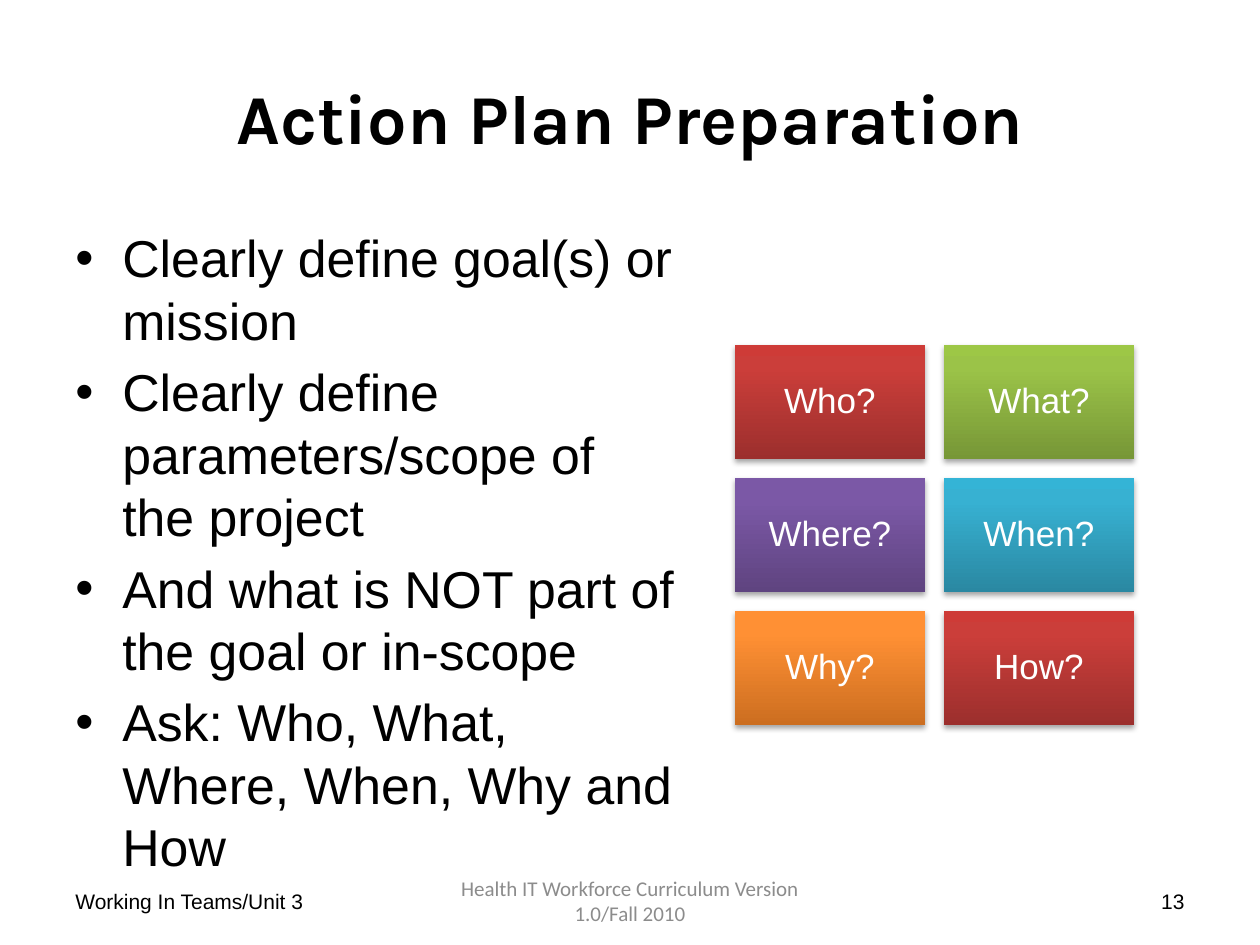
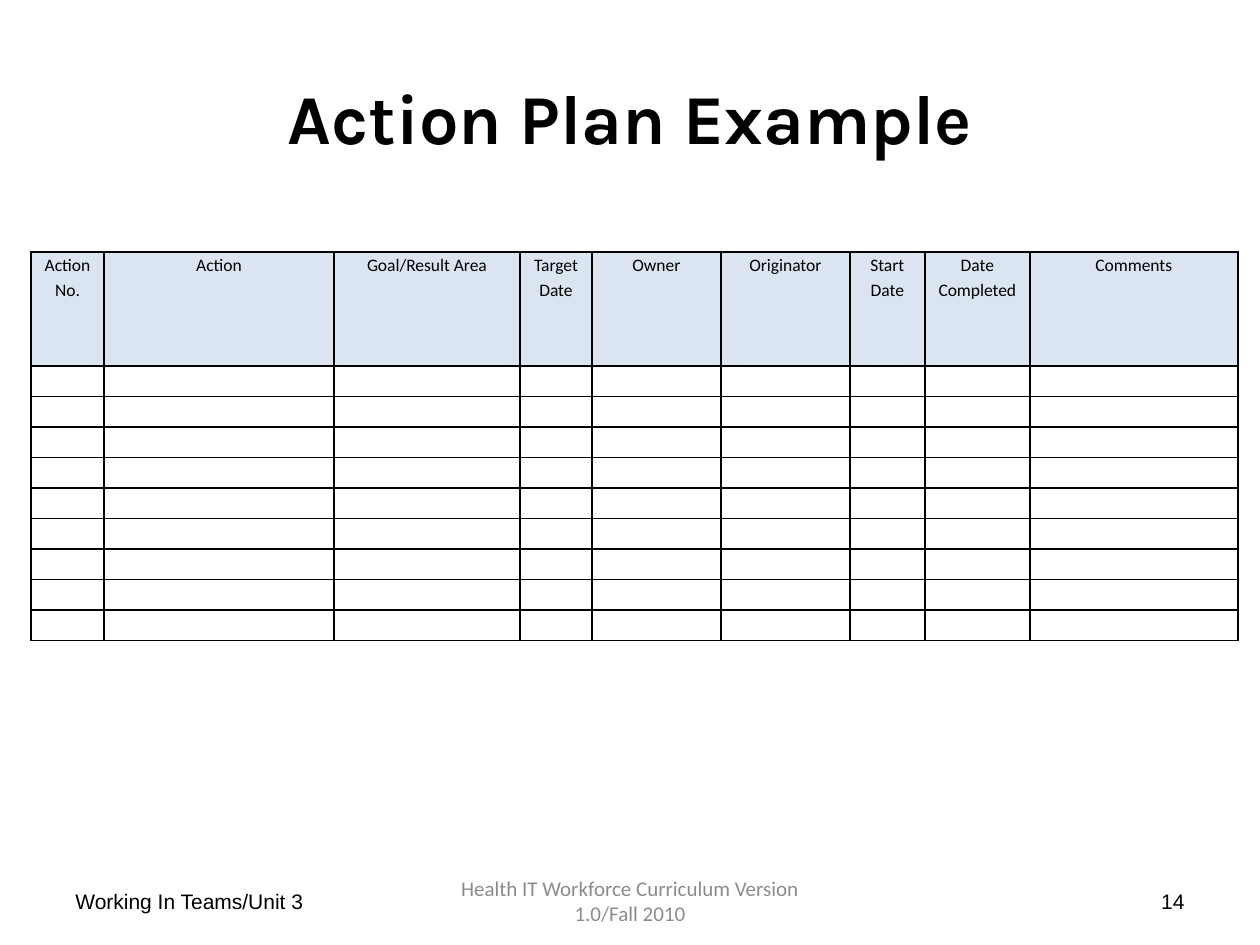
from pptx import Presentation
from pptx.dml.color import RGBColor
from pptx.enum.shapes import MSO_SHAPE
from pptx.enum.text import MSO_ANCHOR, MSO_AUTO_SIZE, PP_ALIGN
from pptx.oxml import parse_xml
from pptx.oxml.ns import nsdecls
from pptx.util import Pt

# Style
BLACK = RGBColor(0x00, 0x00, 0x00)
WHITE = RGBColor(0xFF, 0xFF, 0xFF)
GREY = RGBColor(0x8C, 0x8C, 0x8C)
HEADER_BLUE = RGBColor(0xDB, 0xE5, 0xF1)

# Tile gradients: bottom, near the top, top
RED = [RGBColor.from_string(c) for c in ("9C2F2D", "CB3E3A", "CE3B37")]
GREEN = [RGBColor.from_string(c) for c in ("779737", "9BC348", "9DC746")]
PURPLE = [RGBColor.from_string(c) for c in ("5F4480", "7B58A6", "7C57A8")]
TEAL = [RGBColor.from_string(c) for c in ("2A88A2", "37B1D2", "34B4D6")]
ORANGE = [RGBColor.from_string(c) for c in ("CC6E20", "FF9034", "FF9136")]
STOPS = (0, 80000, 100000)

LEFT, CENTER, RIGHT = PP_ALIGN.LEFT, PP_ALIGN.CENTER, PP_ALIGN.RIGHT
TOP, MIDDLE = MSO_ANCHOR.TOP, MSO_ANCHOR.MIDDLE
NO_FIT = MSO_AUTO_SIZE.NONE
RECT = MSO_SHAPE.RECTANGLE

PX_PER_INCH = 126
TITLE_ONLY = 5


def px(n):
    return round(n * 914400 / PX_PER_INCH)


def write(p, text, font="Arial", size=12, color=BLACK, bold=False,
          align=LEFT, spacing=None, before=None):
    """Put one formatted run in a paragraph."""
    p.alignment = align
    if spacing:
        p.line_spacing = spacing
    if before is not None:
        p.space_before = Pt(before)
    r = p.add_run()
    r.text = text
    r.font.name = font
    r.font.size = Pt(size)
    r.font.bold = bold
    r.font.color.rgb = color


class Deck:
    def __init__(self):
        self.prs = Presentation()
        self.prs.slide_width, self.prs.slide_height = px(1260), px(945)
        self.s = None

    def slide(self, title, number):
        self.s = self.prs.slides.add_slide(self.prs.slide_layouts[TITLE_ONLY])
        sp = self.s.shapes.title
        sp.left, sp.top, sp.width, sp.height = px(63), px(38), px(1134), px(157)
        tf = sp.text_frame
        tf.auto_size = NO_FIT
        tf.vertical_anchor = MIDDLE
        write(tf.paragraphs[0], title, font="Karla", size=40, bold=True,
              align=CENTER)
        self.footer(number)

    def text_frame(self, x, y, w, h, anchor=TOP):
        tf = self.s.shapes.add_textbox(px(x), px(y), px(w), px(h)).text_frame
        tf.word_wrap = True
        tf.auto_size = NO_FIT
        tf.vertical_anchor = anchor
        return tf

    def footer(self, number):
        parts = [
            (63, 294, "Working In Teams/Unit 3", dict(align=LEFT)),
            (430, 400, "Health IT Workforce Curriculum Version 1.0/Fall 2010",
             dict(font="Calibri", color=GREY, align=CENTER)),
            (903, 294, str(number), dict(align=RIGHT)),
        ]
        for x, w, text, style in parts:
            tf = self.text_frame(x, 876, w, 50, MIDDLE)
            write(tf.paragraphs[0], text, **style)

    def bullets(self, x, y, w, h, items):
        tf = self.text_frame(x, y, w, h)
        for i, item in enumerate(items):
            p = tf.add_paragraph() if i else tf.paragraphs[0]
            write(p, item, size=29.6, spacing=1.0, before=5.5)
            pPr = p._p.get_or_add_pPr()
            pPr.set("marL", str(px(47)))
            pPr.set("indent", str(-px(47)))
            pPr.append(parse_xml(
                f'<a:buFont {nsdecls("a")} typeface="Arial"/>'))
            pPr.append(parse_xml(f'<a:buChar {nsdecls("a")} char="•"/>'))

    def tile(self, x, y, w, h, text, colors):
        sp = self.s.shapes.add_shape(RECT, px(x), px(y), px(w), px(h))
        stops = "".join(
            f'<a:gs pos="{pos}"><a:srgbClr val="{c}"/></a:gs>'
            for pos, c in zip(STOPS, colors))
        for xml in (
            f'<a:gradFill {nsdecls("a")} rotWithShape="1">'
            f'<a:gsLst>{stops}</a:gsLst><a:lin ang="16200000"/></a:gradFill>',
            f'<a:ln {nsdecls("a")}><a:noFill/></a:ln>',
            f'<a:effectLst {nsdecls("a")}><a:outerShdw blurRad="40000" '
            'dist="23000" dir="5400000" rotWithShape="0">'
            '<a:srgbClr val="000000"><a:alpha val="35000"/></a:srgbClr>'
            '</a:outerShdw></a:effectLst>',
        ):
            sp._element.spPr.append(parse_xml(xml))
        tf = sp.text_frame
        tf.word_wrap = True
        tf.vertical_anchor = MIDDLE
        tf.margin_left = tf.margin_right = px(10)
        tf.margin_top = tf.margin_bottom = px(10)
        write(tf.paragraphs[0], text, size=20, color=WHITE, align=CENTER,
              spacing=0.9)

    def cell(self, cell, text=None):
        cell.margin_left = cell.margin_right = px(6)
        cell.margin_top = cell.margin_bottom = 0
        p = cell.text_frame.paragraphs[0]
        if text:
            cell.fill.solid()
            cell.fill.fore_color.rgb = HEADER_BLUE
            write(p, text, font="Calibri", size=10, align=CENTER, spacing=1.15)
        else:
            cell.fill.background()
            p._p.append(parse_xml(f'<a:endParaRPr {nsdecls("a")} sz="1000"/>'))
        # Borders come before the fill
        tcPr = cell._tc.get_or_add_tcPr()
        for i, side in enumerate("LRTB"):
            tcPr.insert(i, parse_xml(
                f'<a:ln{side} {nsdecls("a")} w="12700"><a:solidFill>'
                f'<a:srgbClr val="{BLACK}"/></a:solidFill></a:ln{side}>'))

    def table(self, x, y, columns, empty_rows, head_h, body_h):
        frame = self.s.shapes.add_table(
            empty_rows + 1, len(columns), px(x), px(y),
            px(sum(w for _, w in columns)), px(head_h + body_h))
        table = frame.table
        table.horz_banding = False
        table.first_row = False
        for row in table.rows:
            row.height = px(body_h) // empty_rows
        table.rows[0].height = px(head_h)
        for c, (heading, w) in enumerate(columns):
            table.columns[c].width = px(w)
            self.cell(table.cell(0, c), heading)
            for r in range(1, empty_rows + 1):
                self.cell(table.cell(r, c))


def main():
    deck = Deck()

    # Preparation: goals on the left, question tiles on the right
    deck.slide("Action Plan Preparation", 13)
    deck.bullets(63, 220, 630, 624, [
        "Clearly define goal(s) or mission",
        "Clearly define parameters/scope of the project",
        "And what is NOT part of the goal or in-scope",
        "Ask: Who, What, Where, When, Why and How",
    ])
    questions = [("Who?", RED), ("What?", GREEN), ("Where?", PURPLE),
                 ("When?", TEAL), ("Why?", ORANGE), ("How?", RED)]
    tile_w, tile_h, gap = 190, 114, 19
    for i, (question, colors) in enumerate(questions):
        row, col = divmod(i, 2)
        deck.tile(735 + col * (tile_w + gap), 345 + row * (tile_h + gap),
                  tile_w, tile_h, question, colors)

    # Example: an action log ready to fill in
    deck.slide("Action Plan Example", 14)
    deck.table(31, 252, [
        ("Action No.", 73), ("Action", 230), ("Goal/Result Area", 186),
        ("Target Date", 72), ("Owner", 129), ("Originator", 129),
        ("Start Date", 75), ("Date Completed", 105), ("Comments", 208),
    ], empty_rows=9, head_h=114, body_h=275)

    deck.prs.save("out.pptx")


if __name__ == "__main__":
    main()
